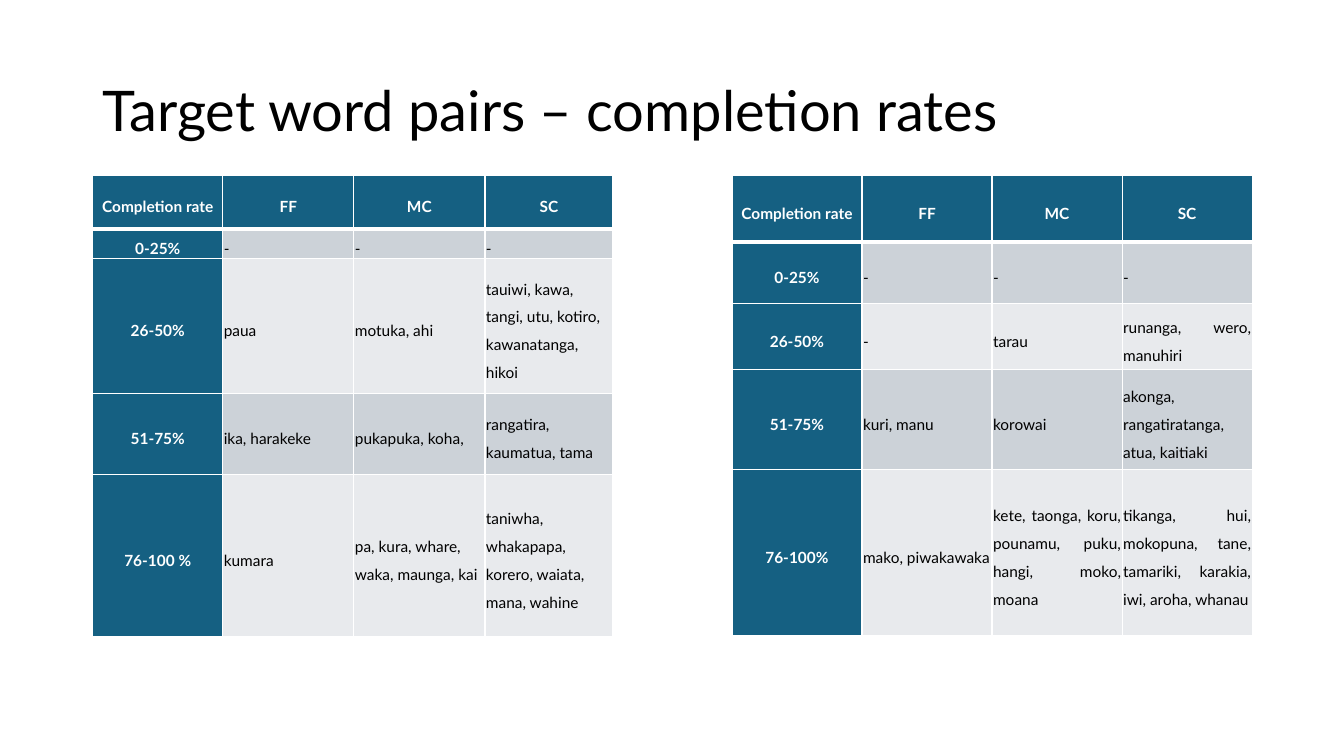
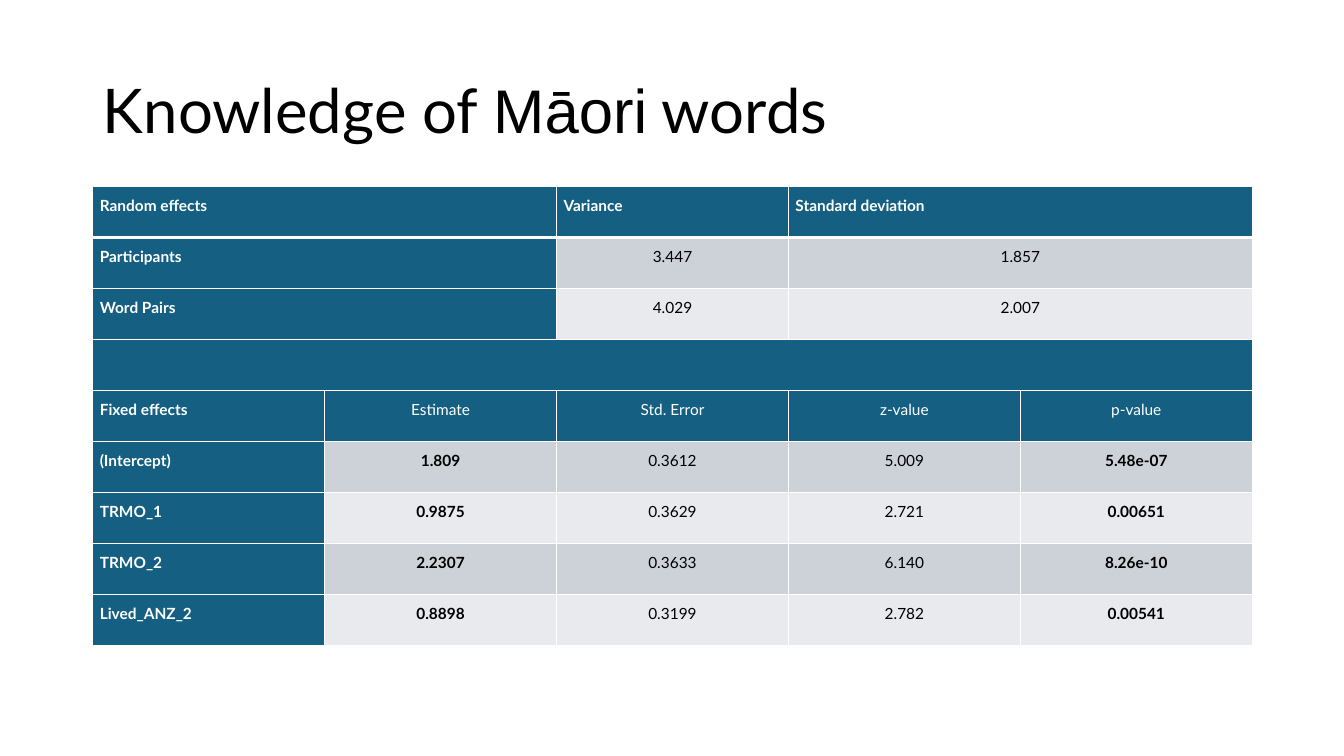
from lxml import etree
from pptx import Presentation
from pptx import util as u
from pptx.dml.color import RGBColor
from pptx.enum import text
from pptx.oxml import ns

COLORS = {"ink": "000000", "paper": "FFFFFF", "header": "156082",
          "odd": "CCD2D8", "even": "E8EAED"}
FONT = "Lato"
SLIDE_WIDTH, SLIDE_HEIGHT = 13.33, 7.5
MARGIN, CONTENT_WIDTH = 0.92, 11.5
PAIR_WIDTH, PAIR_TOP, TABLE_HEIGHT = 5.16, 1.74, 4.56
EFFECTS_TOP = 1.85
LEFT, CENTER, JUSTIFY = (text.PP_ALIGN.LEFT, text.PP_ALIGN.CENTER,
                         text.PP_ALIGN.JUSTIFY)

PAIR_HEADER = ["Completion rate", "FF", "MC", "SC"]
FIRST_PAIRS = [
    PAIR_HEADER,
    ["0-25%", "-", "-", "-"],
    ["26-50%", "paua", "motuka, ahi",
     "tauiwi, kawa, tangi, utu, kotiro, kawanatanga, hikoi"],
    ["51-75%", "ika, harakeke", "pukapuka, koha,", "rangatira, kaumatua, tama"],
    ["76-100 %", "kumara", "pa, kura, whare, waka, maunga, kai",
     "taniwha, whakapapa, korero, waiata, mana, wahine"],
]
SECOND_PAIRS = [
    PAIR_HEADER,
    ["0-25%", "-", "-", "-"],
    ["26-50%", "-", "tarau", "runanga, wero, manuhiri"],
    ["51-75%", "kuri, manu", "korowai",
     "akonga, rangatiratanga, atua, kaitiaki"],
    ["76-100%", "mako, piwakawaka",
     "kete, taonga, koru, pounamu, puku, hangi, moko, moana",
     "tikanga, hui, mokopuna, tane, tamariki, karakia, iwi, aroha, whanau"],
]
SPACER_ROW, FIXED_ROW = 3, 4
EFFECTS = [
    ["Random effects", None, "Variance", "Standard deviation", None],
    ["Participants", None, "3.447", "1.857", None],
    ["Word Pairs", None, "4.029", "2.007", None],
    ["", None, None, None, None],
    ["Fixed effects", "Estimate", "Std. Error", "z-value", "p-value"],
    ["(Intercept)", "1.809", "0.3612", "5.009", "5.48e-07"],
    ["TRMO_1", "0.9875", "0.3629", "2.721", "0.00651"],
    ["TRMO_2", "2.2307", "0.3633", "6.140", "8.26e-10"],
    ["Lived_ANZ_2", "0.8898", "0.3199", "2.782", "0.00541"],
]


def color(name):
    return RGBColor.from_string(COLORS[name])


def add_titled_slide(presentation, size, *runs):
    slide = presentation.slides.add_slide(presentation.slide_layouts[5])
    title = slide.shapes.title
    title.left, title.top = u.Inches(MARGIN), u.Inches(0.4)
    title.width, title.height = u.Inches(CONTENT_WIDTH), u.Inches(1.45)
    frame = title.text_frame
    frame.auto_size = text.MSO_AUTO_SIZE.NONE
    frame.vertical_anchor = text.MSO_ANCHOR.MIDDLE
    paragraph = frame.paragraphs[0]
    paragraph.alignment, paragraph.line_spacing = LEFT, 0.9
    paragraph.font.size = u.Pt(size)
    paragraph.font.color.rgb = color("ink")
    for words, font in runs:
        run = paragraph.add_run()
        run.text, run.font.name = words, font
    return slide


def set_borders(cell, **widths):
    properties = cell._tc.get_or_add_tcPr()
    for side in "LRTB":
        line = etree.SubElement(properties, ns.qn("a:ln" + side),
                                w=str(u.Pt(widths.get(side, 1))))
        fill = etree.SubElement(line, ns.qn("a:solidFill"))
        etree.SubElement(fill, ns.qn("a:srgbClr"), val=COLORS["paper"])


def style_cell(cell, row, is_header, is_bold, alignment, anchor, insets):
    set_borders(cell, T=3 if row == 1 else 1, B=3 if row == 0 else 1)
    cell.fill.solid()
    cell.fill.fore_color.rgb = color(
        "header" if is_header else "odd" if row % 2 else "even")
    cell.vertical_anchor = anchor
    cell.margin_left = cell.margin_right = u.Inches(insets[0])
    cell.margin_top = cell.margin_bottom = u.Inches(insets[1])
    paragraph = cell.text_frame.paragraphs[0]
    paragraph.alignment, paragraph.line_spacing = alignment, 1.5
    paragraph.space_after = u.Pt(8)
    font = paragraph.font
    font.name, font.size, font.bold = FONT, u.Pt(11), is_bold
    font.color.rgb = color("paper" if is_header else "ink")


def add_grid(slide, left, top, widths, heights, rows, style, anchor, insets):
    table = slide.shapes.add_table(
        len(rows), len(widths), u.Inches(left), u.Inches(top),
        u.Inches(sum(widths)), u.Inches(sum(heights))).table
    for column, width in zip(table.columns, widths):
        column.width = u.Inches(width)
    for table_row, height in zip(table.rows, heights):
        table_row.height = u.Inches(height)
    for row, values in enumerate(rows):
        for column, value in enumerate(values):
            cell = table.cell(row, column)
            cell.text = value or ""
            style_cell(cell, row, *style(row, column), anchor, insets)
        starts = [i for i, value in enumerate(values) if value is not None]
        for start, end in zip(starts, starts[1:] + [len(values)]):
            if end - start > 1:
                table.cell(row, start).merge(table.cell(row, end - 1))


def add_pairs(slide, left, widths, heights, rows, body_alignment):
    def style(row, column):
        is_header = row == 0 or column == 0
        return is_header, is_header, CENTER if is_header else body_alignment

    add_grid(slide, left, PAIR_TOP, widths, heights, rows, style,
             text.MSO_ANCHOR.MIDDLE, (0.01, 0.01))


def effects_style(row, column):
    is_label = row == 0 or column == 0
    is_header = is_label or row in (SPACER_ROW, FIXED_ROW)
    is_key_value = row > FIXED_ROW and column in (1, 4)
    return is_header, is_label or is_key_value, JUSTIFY if is_label else CENTER


def add_effects(slide):
    columns, rows = len(EFFECTS[0]), len(EFFECTS)
    add_grid(slide, MARGIN, EFFECTS_TOP, [CONTENT_WIDTH / columns] * columns,
             [TABLE_HEIGHT / rows] * rows, EFFECTS, effects_style,
             text.MSO_ANCHOR.TOP, (0.07, 0))


def main():
    presentation = Presentation()
    presentation.slide_width = u.Inches(SLIDE_WIDTH)
    presentation.slide_height = u.Inches(SLIDE_HEIGHT)

    slide = add_titled_slide(
        presentation, 40, ("Target word pairs – completion rates", FONT))
    add_pairs(slide, MARGIN + CONTENT_WIDTH - PAIR_WIDTH, [PAIR_WIDTH / 4] * 4,
              [0.66, 0.61, 0.66, 0.99, 1.65], SECOND_PAIRS, JUSTIFY)
    add_pairs(slide, MARGIN, [1.29, 1.3, 1.3, 1.27],
              [0.53, 0.26, 1.34, 0.8, 1.61], FIRST_PAIRS, LEFT)

    slide = add_titled_slide(presentation, 44, ("Knowledge of ", FONT),
                             ("Māori", "Arial"), (" words", FONT))
    add_effects(slide)
    presentation.save("out.pptx")


if __name__ == "__main__":
    main()
